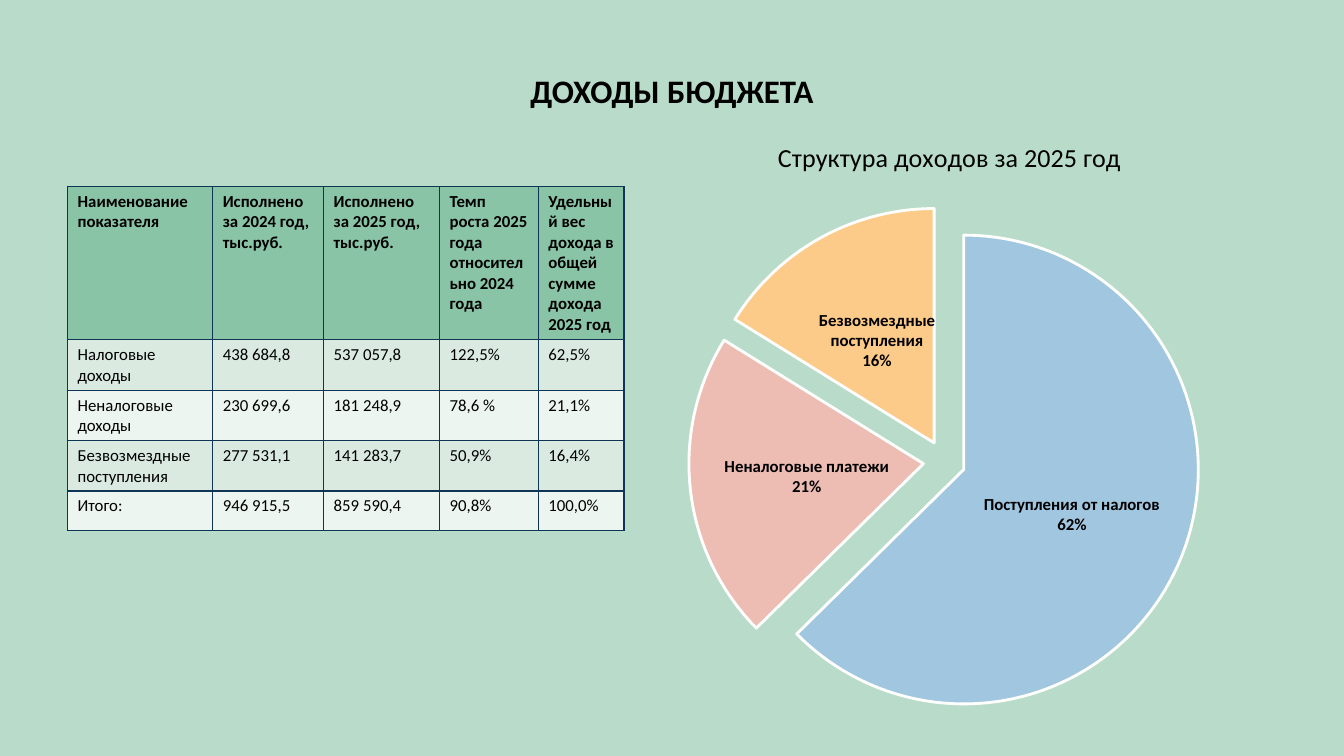
import pptx
import pptx.util
import pptx.chart.data
import pptx.dml.color
import pptx.enum.chart
import pptx.enum.text
import pptx.oxml
import pptx.oxml.ns

COLORS = {
    "page": "B9DCCA", "header": "8AC4A7", "odd": "DAEAE1", "even": "EDF5F1",
    "border": "0E3554", "text": "000000", "outline": "FFFFFF",
}
SLICES = {
    "Поступления от налогов": (62, "A1C6E0"),
    "Неналоговые платежи": (21, "EDBDB3"),
    "Безвозмездные поступления": (16, "FCCB89"),
}
FONT = "Calibri"
CHART_TITLE = "Структура доходов за 2025 год"
inch = pptx.util.Inches


def color(name):
    return pptx.dml.color.RGBColor.from_string(COLORS.get(name, name))


def write(frame, text, size=12, bold=False, align=None, spacing=None):
    para = frame.paragraphs[0]
    para.alignment = align
    para.line_spacing = spacing
    span = para.add_run()
    span.text = text
    span.font.name = FONT
    span.font.size = pptx.util.Pt(size)
    span.font.bold = bold
    span.font.color.rgb = color("text")


deck = pptx.Presentation()
deck.slide_width, deck.slide_height = inch(13.33), inch(7.5)
page = deck.slides.add_slide(deck.slide_layouts[6])
page.background.fill.solid()
page.background.fill.fore_color.rgb = color("page")

# Heading
box = page.shapes.add_textbox(inch(1.25), inch(0.68), inch(10.83), inch(0.49))
box.text_frame.word_wrap = True
box.text_frame.vertical_anchor = pptx.enum.text.MSO_ANCHOR.MIDDLE
write(box.text_frame, "ДОХОДЫ БЮДЖЕТА", size=23.4, bold=True,
      align=pptx.enum.text.PP_ALIGN.CENTER, spacing=0.9)

# Income table
rows = [
    ["Наименование показателя", "Исполнено за 2024 год, тыс.руб.",
     "Исполнено за 2025 год, тыс.руб.",
     "Темп роста 2025 года относительно 2024 года",
     "Удельный вес дохода в общей сумме дохода 2025 год"],
    ["Налоговые доходы", "438 684,8", "537 057,8", "122,5%", "62,5%"],
    ["Неналоговые доходы", "230 699,6", "181 248,9", "78,6 %", "21,1%"],
    ["Безвозмездные поступления", "277 531,1", "141 283,7", "50,9%", "16,4%"],
    ["Итого:", "946 915,5", "859 590,4", "90,8%", "100,0%"],
]
widths = [1.44, 1.1, 1.15, 0.98, 0.85]
heights = [1.52, 0.5, 0.5, 0.5, 0.39]
table = page.shapes.add_table(
    len(rows), len(widths), inch(0.67), inch(1.85),
    inch(sum(widths)), inch(sum(heights))).table
for column, width in zip(table.columns, widths):
    column.width = inch(width)
for line, height in zip(table.rows, heights):
    line.height = inch(height)

namespace = pptx.oxml.ns.nsdecls("a")
for r, texts in enumerate(rows):
    fill = "header" if r == 0 else "odd" if r % 2 else "even"
    for c, text in enumerate(texts):
        cell = table.cell(r, c)
        write(cell.text_frame, text, bold=r == 0)
        cell.fill.solid()
        cell.fill.fore_color.rgb = color(fill)
        properties = cell._tc.get_or_add_tcPr()
        for position, side in enumerate(("lnL", "lnR", "lnT", "lnB")):
            properties.insert(position, pptx.oxml.parse_xml(
                f'<a:{side} {namespace} w="12700"><a:solidFill>'
                f'<a:srgbClr val="{COLORS["border"]}"/></a:solidFill></a:{side}>'))

# Pie of income shares
data = pptx.chart.data.CategoryChartData(number_format="0")
data.categories = list(SLICES)
data.add_series(CHART_TITLE, [value for value, _ in SLICES.values()])
chart = page.shapes.add_chart(
    pptx.enum.chart.XL_CHART_TYPE.PIE,
    inch(6.11), inch(1.16), inch(6.62), inch(6.05), data).chart
chart.font.name = FONT
chart.font.size = pptx.util.Pt(10)
chart.has_legend = False
chart.has_title = True
write(chart.chart_title.text_frame, CHART_TITLE, size=18.6)
chart.chart_title.include_in_layout = False

plot = chart.plots[0]
plot.vary_by_categories = True
series = plot.series[0]
for index, (_, hue) in enumerate(SLICES.values()):
    look = series.points[index].format
    look.fill.solid()
    look.fill.fore_color.rgb = color(hue)
    look.line.color.rgb = color("outline")
    look.line.width = pptx.util.Pt(2)

# Slice labels: name above share
labels = series.data_labels
labels.number_format = '0"%"'
labels.number_format_is_linked = False
labels.position = pptx.enum.chart.XL_LABEL_POSITION.CENTER
labels.show_category_name = True
labels.show_value = True
labels.font.name = FONT
labels.font.size = pptx.util.Pt(12)
labels.font.bold = True
labels.font.color.rgb = color("text")

# Label line break, gap between slices and plot area
namespace = pptx.oxml.ns.nsdecls("c")
qn = pptx.oxml.ns.qn
labels._element.find(qn("c:showBubbleSize")).addnext(
    pptx.oxml.parse_xml(f"<c:separator {namespace}>\n</c:separator>"))
series._element.find(qn("c:dPt")).addprevious(
    pptx.oxml.parse_xml(f'<c:explosion {namespace} val="9"/>'))
area = chart._chartSpace.chart.plotArea
for old in area.findall(qn("c:layout")):
    area.remove(old)
area.insert(0, pptx.oxml.parse_xml(
    f'<c:layout {namespace}><c:manualLayout><c:layoutTarget val="inner"/>'
    '<c:xMode val="edge"/><c:yMode val="edge"/><c:x val="0.015"/>'
    '<c:y val="0.146"/><c:w val="0.954"/><c:h val="0.838"/>'
    '</c:manualLayout></c:layout>'))

deck.save("out.pptx")
